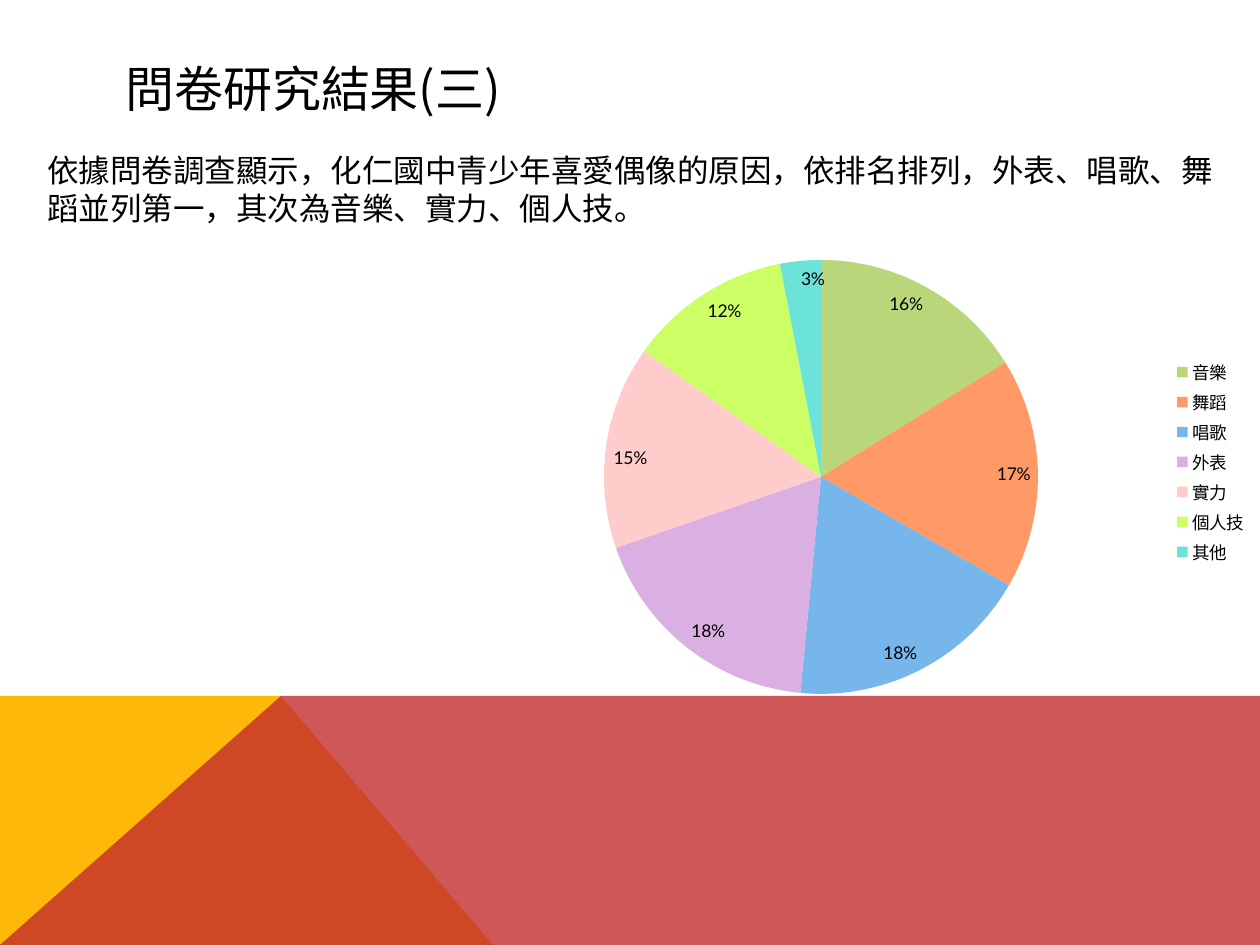
import pptx
import pptx.chart.data
import pptx.dml.color
import pptx.enum.chart
import pptx.enum.text
import pptx.oxml
import pptx.oxml.ns
import pptx.util
from dataclasses import dataclass

# Content
TITLE = "問卷研究結果(三)"
SUMMARY = ("依據問卷調查顯示，化仁國中青少年喜愛偶像的原因，依排名排列，"
           "外表、唱歌、舞蹈並列第一，其次為音樂、實力、個人技。")
REASONS = [  # label, percent, slice colour
    ("音樂", 16, "B9D77A"),
    ("舞蹈", 17, "FF9966"),
    ("唱歌", 18, "76B6EA"),
    ("外表", 18, "DAB0E2"),
    ("實力", 15, "FFCCCC"),
    ("個人技", 12, "CCFF66"),
    ("其他", 3, "6BE3D8"),
]


@dataclass(frozen=True)
class Theme:
    text: str = "000000"
    yellow: str = "FEB80A"
    red: str = "C32D2E"
    text_font: str = "Noto Sans CJK SC"
    chart_font: str = "Lato"
    title_size: int = 28
    body_size: int = 18
    chart_size: int = 10


THEME = Theme()
PX = 914400 // 126
WIDTH, HEIGHT = 1260, 945
HORIZON, PEAK = 696, 281  # top of the footer band and its apex
FOOTER = [  # corners, colour, opacity in percent
    ([(0, HEIGHT), (0, HORIZON), (PEAK, HORIZON), (493, HEIGHT)], THEME.yellow, 100),
    ([(0, HEIGHT), (PEAK, HORIZON), (WIDTH, HORIZON), (WIDTH, HEIGHT)], THEME.red, 80),
]
CHART = (471, 214, 789, 496)
PIE = (604, 260, 434, 434)


def rgb(value):
    return pptx.dml.color.RGBColor.from_string(value)


def element(tag, **attributes):
    node = pptx.oxml.parse_xml(f"<{tag} {pptx.oxml.ns.nsdecls(tag.split(':')[0])}/>")
    for name, value in attributes.items():
        node.set(name, str(value))
    return node


def add_text(page, text, frame, size, anchor, leading=None):
    box = page.shapes.add_textbox(*(n * PX for n in frame))
    box.text_frame.word_wrap = True
    box.text_frame.vertical_anchor = anchor
    para = box.text_frame.paragraphs[0]
    if leading:
        para.line_spacing = pptx.util.Pt(leading)
    span = para.add_run()
    span.text = text
    span.font.size = pptx.util.Pt(size)
    span.font.name = THEME.text_font
    span.font.color.rgb = rgb(THEME.text)
    span.font._element.append(element("a:ea", typeface=THEME.text_font))


def add_polygon(page, corners, colour, opacity):
    builder = page.shapes.build_freeform(*corners[0], scale=PX)
    builder.add_line_segments(corners[1:], close=True)
    shape = builder.convert_to_shape()
    shape.shadow.inherit = False
    shape.line.fill.background()
    shape.fill.solid()
    shape.fill.fore_color.rgb = rgb(colour)
    if opacity < 100:
        fill = shape.fill._xPr.find(pptx.oxml.ns.qn("a:solidFill"))
        fill[0].append(element("a:alpha", val=opacity * 1000))


def place_pie(chart):
    left, top, width, height = CHART
    fractions = {
        "x": (PIE[0] - left) / width,
        "y": (PIE[1] - top) / height,
        "w": PIE[2] / width,
        "h": PIE[3] / height,
    }
    manual = element("c:manualLayout")
    manual.append(element("c:layoutTarget", val="inner"))
    for name in ("xMode", "yMode"):
        manual.append(element(f"c:{name}", val="edge"))
    for name, value in fractions.items():
        manual.append(element(f"c:{name}", val=round(value, 4)))
    layout = element("c:layout")
    layout.append(manual)
    area = chart._chartSpace.chart.plotArea
    for old in area.findall(pptx.oxml.ns.qn("c:layout")):
        area.remove(old)
    area.insert(0, layout)


def add_pie(page):
    data = pptx.chart.data.CategoryChartData()
    data.categories = [label for label, _, _ in REASONS]
    data.add_series("Series 1", [value for _, value, _ in REASONS])
    chart = page.shapes.add_chart(
        pptx.enum.chart.XL_CHART_TYPE.PIE, *(n * PX for n in CHART), data).chart
    chart.has_title = False
    chart.font.size = pptx.util.Pt(THEME.chart_size)
    chart.font.name = THEME.chart_font
    chart.font.color.rgb = rgb(THEME.text)
    chart.has_legend = True
    chart.legend.position = pptx.enum.chart.XL_LEGEND_POSITION.RIGHT
    chart.legend.include_in_layout = False

    plot = chart.plots[0]
    plot.vary_by_categories = True
    for index, (_, _, colour) in enumerate(REASONS):
        piece = plot.series[0].points[index].format
        piece.fill.solid()
        piece.fill.fore_color.rgb = rgb(colour)
        piece.line.fill.background()
    plot.has_data_labels = True
    labels = plot.data_labels
    labels.show_value = False
    labels.show_percentage = True
    labels.number_format = "0%"
    labels.number_format_is_linked = False
    labels.position = pptx.enum.chart.XL_LABEL_POSITION.INSIDE_END
    place_pie(chart)


def main():
    deck = pptx.Presentation()
    deck.slide_width, deck.slide_height = WIDTH * PX, HEIGHT * PX
    page = deck.slides.add_slide(deck.slide_layouts[6])
    anchors = pptx.enum.text.MSO_ANCHOR

    # Footer band
    for corners, colour, opacity in FOOTER:
        add_polygon(page, corners, colour, opacity)

    # Title, chart and summary
    add_text(page, TITLE, (113, 50, 1036, 76), THEME.title_size, anchors.MIDDLE)
    add_pie(page)
    add_text(page, SUMMARY, (35, 145, 1211, 89), THEME.body_size, anchors.TOP,
             leading=21.5)

    deck.save("out.pptx")


if __name__ == "__main__":
    main()
